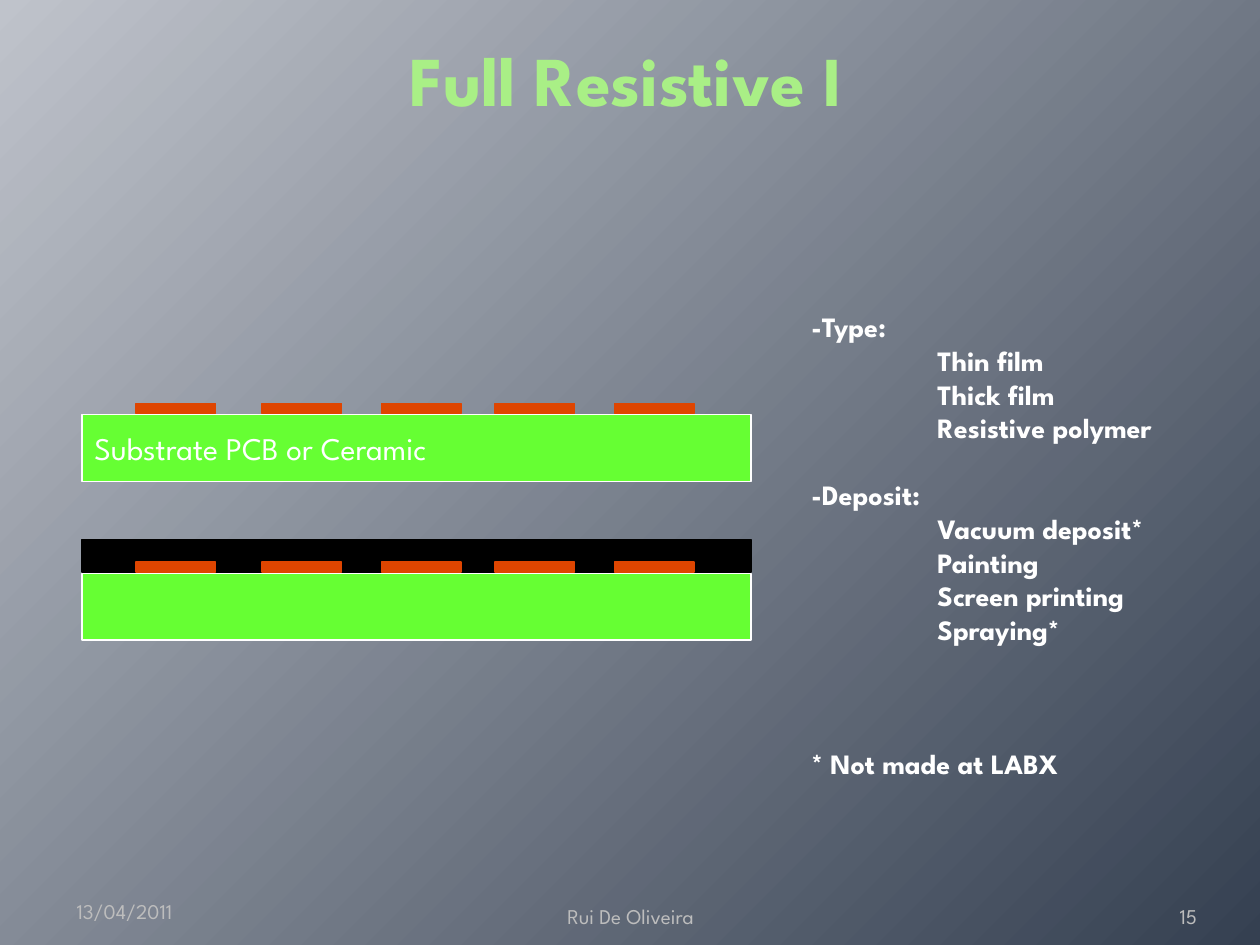
from dataclasses import dataclass

from pptx import Presentation
from pptx.dml.color import RGBColor as Color
from pptx.enum.shapes import MSO_SHAPE as Shape
from pptx.enum.text import MSO_ANCHOR as Anchor, MSO_AUTO_SIZE as AutoSize, PP_ALIGN as Align
from pptx.oxml.xmlchemy import OxmlElement
from pptx.util import Inches, Pt


@dataclass(frozen=True)
class Theme:
    font: str = "League Spartan"
    light: str = "BFC3CB"
    dark: str = "354051"
    title: str = "A9EF86"
    text: str = "FFFFFF"
    footer: str = "BDBDBD"
    substrate: str = "66FF33"
    pad: str = "DE4500"
    coating: str = "000000"
    title_size: int = 40
    label_size: int = 18
    list_size: int = 16
    footer_size: int = 12
    line_width: float = 0.75


class SlideBuilder:
    def __init__(self, slide, theme):
        self.slide = slide
        self.theme = theme

    def background(self):
        fill = self.slide.background.fill
        fill.gradient()
        fill.gradient_angle = 315
        for stop, color in zip(fill.gradient_stops, (self.theme.light, self.theme.dark)):
            stop.color.rgb = Color.from_string(color)

    def place(self, shape, left, top, width, height):
        shape.left, shape.top = Inches(left), Inches(top)
        shape.width, shape.height = Inches(width), Inches(height)

    def add_run(self, paragraph, text, size, color, bold=False):
        run = paragraph.add_run()
        run.text = text
        run.font.name = self.theme.font
        run.font.size = Pt(size)
        run.font.bold = bold
        run.font.color.rgb = Color.from_string(color)

    def title(self, text, *box):
        shape = self.slide.shapes.title
        self.place(shape, *box)
        shape.text_frame.vertical_anchor = Anchor.MIDDLE
        paragraph = shape.text_frame.paragraphs[0]
        paragraph.alignment = Align.CENTER
        self.add_run(paragraph, text, self.theme.title_size, self.theme.title, True)

    def body(self, items, *box):
        shape = self.slide.placeholders[1]
        self.place(shape, *box)
        frame = shape.text_frame
        frame.auto_size = AutoSize.NONE
        frame.vertical_anchor = Anchor.TOP
        for index, (text, indent, gap) in enumerate(items):
            paragraph = frame.paragraphs[0] if index == 0 else frame.add_paragraph()
            paragraph.space_before = Pt(gap)
            properties = paragraph._p.get_or_add_pPr()
            properties.set("marL", str(Inches(indent)))
            properties.set("indent", "0")
            properties.append(OxmlElement("a:buNone"))
            self.add_run(paragraph, text, self.theme.list_size, self.theme.text, True)

    def footer(self, text, alignment, side_inset, *box):
        shape = self.slide.shapes.add_textbox(*map(Inches, box))
        frame = shape.text_frame
        frame.word_wrap = True
        frame.vertical_anchor = Anchor.BOTTOM
        frame.margin_left = frame.margin_right = Inches(side_inset)
        paragraph = frame.paragraphs[0]
        paragraph.alignment = alignment
        self.add_run(paragraph, text, self.theme.footer_size, self.theme.footer)

    def rectangle(self, fill, line, *box):
        shape = self.slide.shapes.add_shape(Shape.RECTANGLE, *map(Inches, box))
        shape.shadow.inherit = False
        shape.fill.solid()
        shape.fill.fore_color.rgb = Color.from_string(fill)
        shape.line.color.rgb = Color.from_string(line)
        shape.line.width = Pt(self.theme.line_width)
        return shape

    def label(self, shape, text):
        frame = shape.text_frame
        frame.word_wrap = True
        frame.vertical_anchor = Anchor.MIDDLE
        paragraph = frame.paragraphs[0]
        paragraph.alignment = Align.LEFT
        self.add_run(paragraph, text, self.theme.label_size, self.theme.text)

    def board(self, top, text="", coated=False):
        theme = self.theme
        left, width = 0.65, 5.31
        if coated:
            self.rectangle(theme.coating, theme.coating, left, top - 0.27, width, 0.26)
        substrate = self.rectangle(theme.substrate, theme.text, left, top, width, 0.53)
        if text:
            self.label(substrate, text)
        for pad_left in (1.08, 2.08, 3.03, 3.93, 4.88):
            self.rectangle(theme.pad, theme.pad, pad_left, top - 0.09, 0.63, 0.08)


def main():
    presentation = Presentation()
    presentation.slide_width, presentation.slide_height = Inches(10), Inches(7.5)
    slide = presentation.slides.add_slide(presentation.slide_layouts[1])
    builder = SlideBuilder(slide, Theme())

    builder.background()
    builder.title("Full Resistive I", 0.47, 0, 9, 1.25)

    builder.board(3.29, text="Substrate PCB or Ceramic")
    builder.board(4.55, coated=True)

    blank_line = 19.2
    groups = {
        "-Type:": ("Thin film", "Thick film", "Resistive polymer"),
        "-Deposit:": ("Vacuum deposit*", "Painting", "Screen printing", "Spraying*"),
    }
    items = []
    for heading, entries in groups.items():
        items.append((heading, 0, blank_line if items else 0))
        items += [(entry, 1, 0) for entry in entries]
    items.append(("* Not made at LABX", 0, 3 * blank_line))
    builder.body(items, 6.34, 2.41, 3.36, 4.51)

    builder.footer("13/04/2011", Align.LEFT, 0.1, 0.51, 6.98, 2.33, 0.4)
    builder.footer("Rui De Oliveira", Align.CENTER, 0.1, 3.42, 7.02, 3.17, 0.4)
    builder.footer("15", Align.RIGHT, 0, 8.67, 7.02, 0.83, 0.4)

    presentation.save("out.pptx")


if __name__ == "__main__":
    main()
